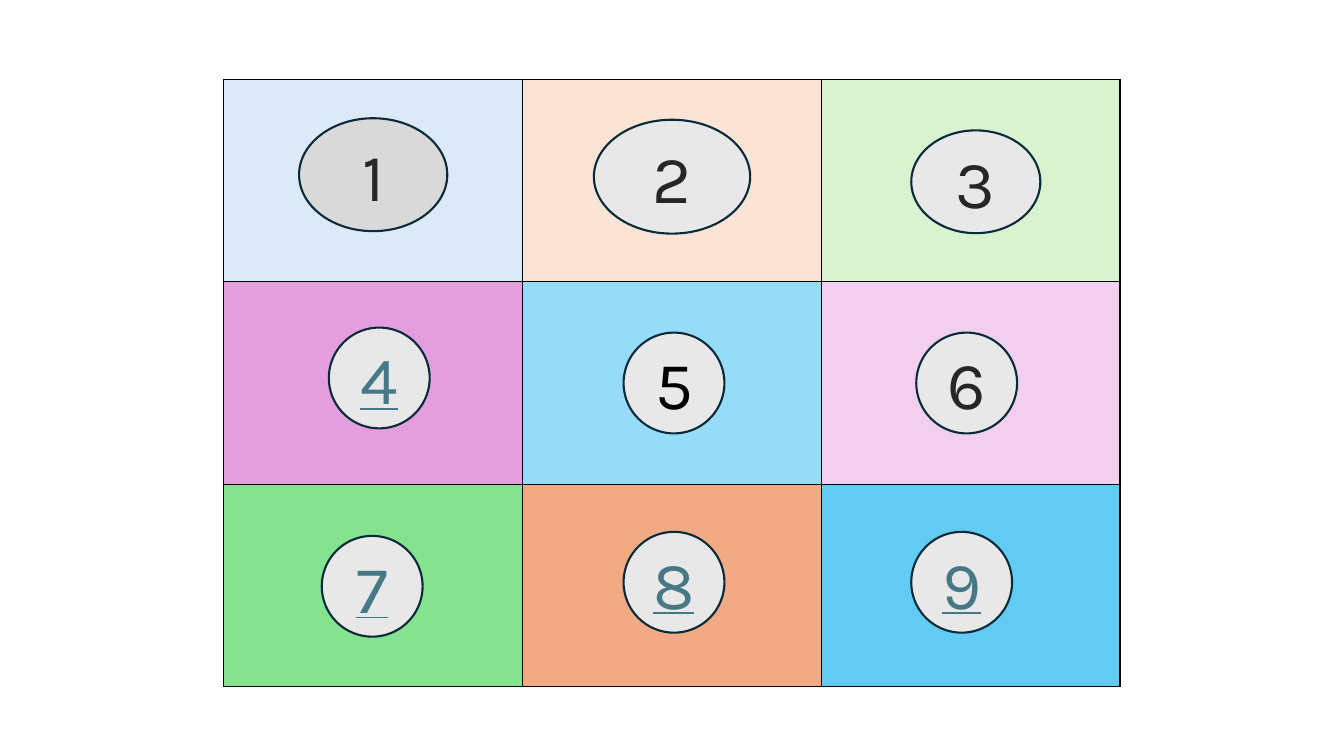
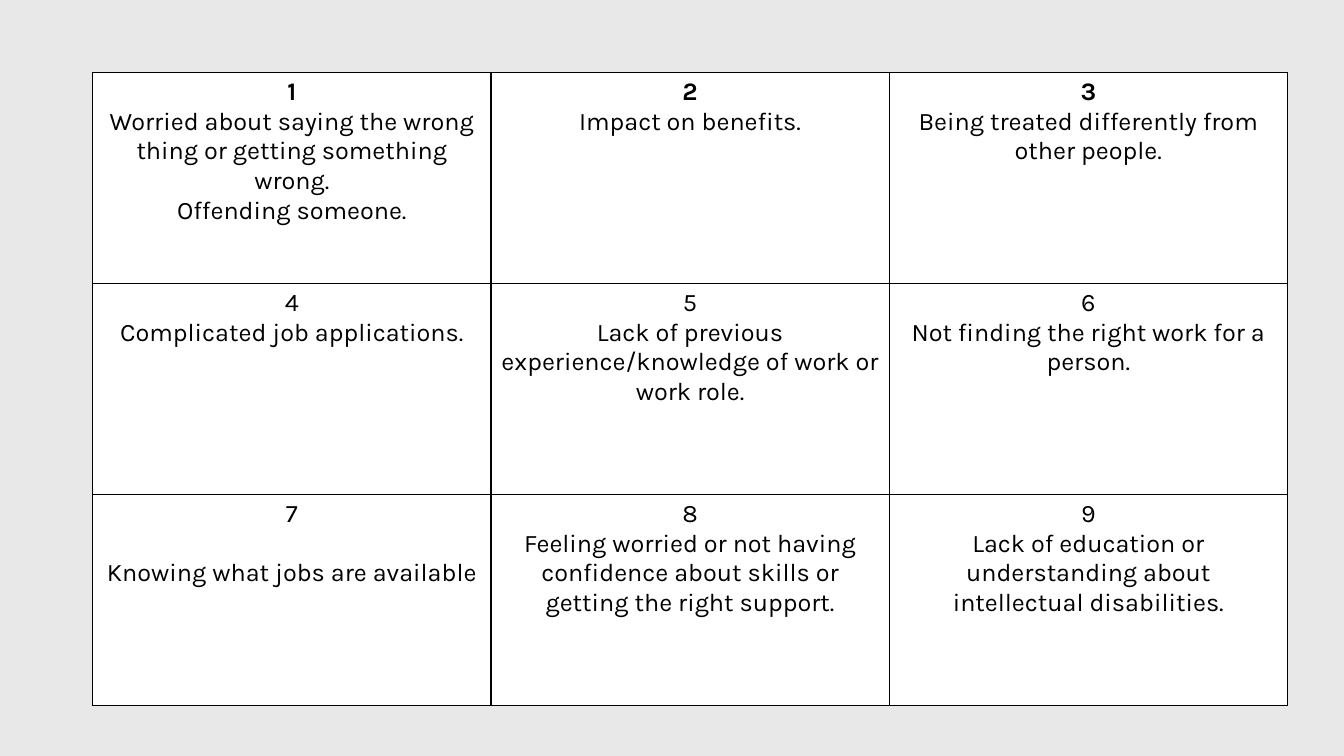
from lxml import etree
from pptx import Presentation
from pptx.dml.color import RGBColor
from pptx.enum.shapes import MSO_SHAPE
from pptx.enum.text import MSO_ANCHOR, PP_ALIGN
from pptx.oxml.ns import qn
from pptx.util import Inches, Pt

OVAL = MSO_SHAPE.OVAL
CENTER = PP_ALIGN.CENTER
MIDDLE = MSO_ANCHOR.MIDDLE

FONT = "Karla"
BLANK = 6
N = 3
COLORS = {
    "white": "FFFFFF",
    "black": "000000",
    "paper": "E8E8E8",
    "grey": "D9D9D9",
    "outline": "092A39",
    "digit": "262626",
    "link": "467886",
}
TILES = [
    ["DCEAF7", "FBE3D6", "D9F2D0"],
    ["E59EDD", "96DCF8", "F2CFEE"],
    ["84E291", "F2AA84", "61CBF4"],
]
BOARD = (2.22, 0.79, 8.89, 6.02)
ANSWERS = (0.92, 0.72, 11.85, 6.28)

# fmt: off
BUTTONS = [
    {"shift": (0, -0.06), "size": (1.47, 1.12), "fill": "grey"},
    {"shift": (0, -0.04), "size": (1.55, 1.13)},
    {"shift": (0.05, 0.01), "size": (1.28, 1.02)},
    {"shift": (0.06, -0.05), "link": True},
    {"shift": (0.02, 0), "color": "black"},
    {"shift": (-0.04, 0)},
    {"shift": (-0.01, 0.01), "link": True},
    {"shift": (0.02, -0.03), "link": True},
    {"shift": (-0.09, -0.03), "link": True},
]
BARRIERS = [
    ["Worried about saying the wrong thing or getting something wrong.",
     "Offending someone."],
    ["Impact on benefits."],
    ["Being treated differently from other people."],
    ["Complicated job applications."],
    ["Lack of previous experience/knowledge of work or work role."],
    ["Not finding the right work for a person."],
    ["Knowing what jobs are available"],
    ["Feeling worried or not having confidence about skills or getting the right support."],
    ["Lack of education or understanding about intellectual disabilities."],
]
GAP_AFTER = {7: 21}


def rgb(name):
    return RGBColor.from_string(COLORS.get(name, name))


def paint(fill, color):
    fill.solid()
    fill.fore_color.rgb = rgb(color)


def add_slide(prs, background):
    slide = prs.slides.add_slide(prs.slide_layouts[BLANK])
    paint(slide.background.fill, background)
    return slide


def write(p, text, size=18, color="black", bold=False, underline=False, after=0):
    p.alignment = CENTER
    p.space_after = Pt(after)
    r = p.add_run()
    r.text = text
    r.font.name = FONT
    r.font.size = Pt(size)
    r.font.bold = bold
    r.font.underline = underline
    r.font.color.rgb = rgb(color)


def add_border(cell):
    tcPr = cell._tc.get_or_add_tcPr()
    for i, side in enumerate(("lnL", "lnR", "lnT", "lnB")):
        ln = etree.Element(qn(f"a:{side}"), w=str(Pt(1)))
        fill = etree.SubElement(ln, qn("a:solidFill"))
        etree.SubElement(fill, qn("a:srgbClr"), val=COLORS["black"])
        tcPr.insert(i, ln)


def add_grid(slide, box, fills):
    frame = slide.shapes.add_table(N, N, *map(Inches, box))
    table = frame.table
    table.first_row = table.horz_banding = False
    for i in range(N):
        table.columns[i].width = Inches(box[2] / N)
        table.rows[i].height = Inches(box[3] / N)
        for j in range(N):
            cell = table.cell(i, j)
            paint(cell.fill, fills[i][j])
            add_border(cell)
    return table


def add_button(slide, number, shift, size=(1, 1), fill="paper", color="digit", link=False):
    row, col = divmod(number - 1, N)
    left, top, width, height = BOARD
    x = left + (col + 0.5) * width / N + shift[0] - size[0] / 2
    y = top + (row + 0.5) * height / N + shift[1] - size[1] / 2
    sp = slide.shapes.add_shape(OVAL, *map(Inches, (x, y, *size)))
    sp.shadow.inherit = False
    paint(sp.fill, fill)
    sp.line.color.rgb = rgb("outline")
    sp.line.width = Pt(1.5)
    tf = sp.text_frame
    tf.vertical_anchor = MIDDLE
    write(tf.paragraphs[0], str(number), size=48,
          color="link" if link else color, underline=link)


def fill_answer(cell, number, lines):
    tf = cell.text_frame
    write(tf.paragraphs[0], str(number), bold=number <= N,
          after=GAP_AFTER.get(number, 0))
    for line in lines:
        write(tf.add_paragraph(), line)


def main():
    prs = Presentation()
    prs.slide_width, prs.slide_height = Inches(13.33), Inches(7.5)

    board = add_slide(prs, "white")
    add_grid(board, BOARD, TILES)
    for number, button in enumerate(BUTTONS, 1):
        add_button(board, number, **button)

    answers = add_slide(prs, "paper")
    table = add_grid(answers, ANSWERS, [["white"] * N] * N)
    for number, lines in enumerate(BARRIERS, 1):
        fill_answer(table.cell(*divmod(number - 1, N)), number, lines)

    prs.save("out.pptx")


if __name__ == "__main__":
    main()
